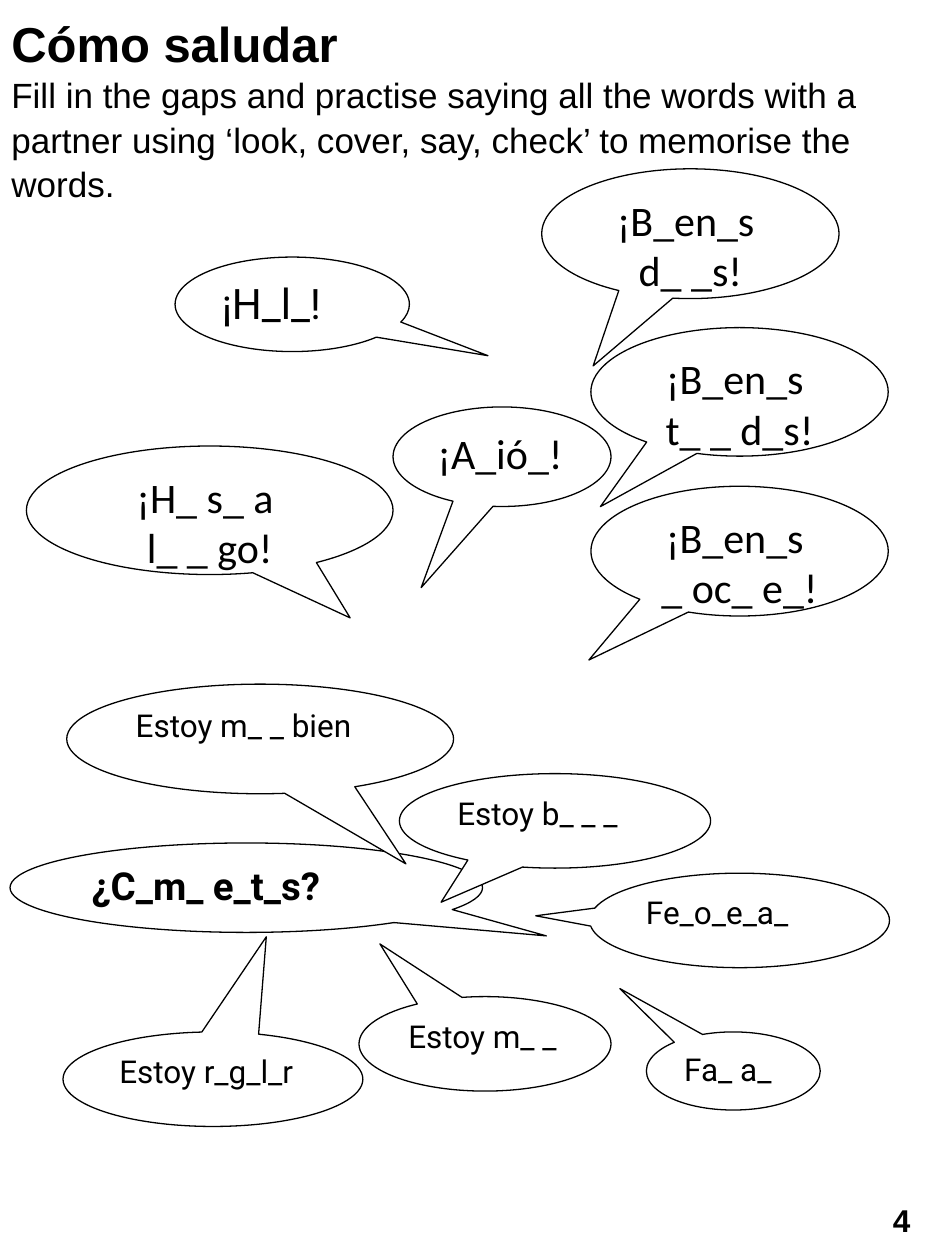
from collections import namedtuple
from dataclasses import dataclass

from pptx import Presentation
from pptx import util as u
from pptx.dml import color
from pptx.enum import shapes, text


@dataclass(frozen=True)
class Theme:
    ink: color.RGBColor = color.RGBColor(0, 0, 0)
    paper: color.RGBColor = color.RGBColor(255, 255, 255)
    outline: float = 0.75
    title: int = 28
    greeting: int = 24
    question: int = 22
    instruction: int = 20
    answer: int = 18
    page_number: int = 18


THEME = Theme()
Box = namedtuple("Box", "left top width height")
Style = namedtuple("Style", "font size bold align")
LEFT, CENTER = text.PP_ALIGN.LEFT, text.PP_ALIGN.CENTER

HELLO = Style("Roboto", THEME.greeting, False, LEFT)
GOODBYE = Style("Calibri", THEME.greeting, False, LEFT)
GREETING = Style("Calibri", THEME.greeting, False, CENTER)
QUESTION = Style("Roboto", THEME.question, True, LEFT)
ANSWER = Style("Roboto", THEME.answer, False, LEFT)
TITLE = Style("Arial", THEME.title, True, LEFT)
INSTRUCTION = Style("Arial", THEME.instruction, False, LEFT)
NUMBER = Style("Arial", THEME.page_number, True, CENTER)

GREETINGS = [
    ("¡H_l_!", Box(1.18, 0.7, 1.86, 0.75), (0.835, 0.544), HELLO),
    ("¡A_ió_!", Box(2.91, 1.89, 1.73, 0.79), (-0.371, 1.315), GOODBYE),
    ("¡B_en_s \vd_ _s!", Box(4.09, 0, 2.36, 1.03), (-0.327, 1.019), GREETING),
    ("¡B_en_s \vt_ _ d_s!", Box(4.48, 1.26, 2.36, 1.02), (-0.468, 0.893), GREETING),
    ("¡B_en_s \v_ oc_ e_!", Box(4.48, 2.52, 2.36, 1.03), (-0.507, 0.839), GREETING),
    ("¡H_ s_ a \vl_ _ go!", Box(0, 2.2, 2.91, 1.02), (0.383, 0.837), GREETING),
]
FEELINGS = [
    ("¿C_m_ e_t_s?", Box(0, 1.26, 3.75, 0.71), (0.635, 0.539), QUESTION),
    ("Estoy m_ _ bien", Box(0.45, 0, 3.07, 0.87), (0.377, 1.14), ANSWER),
    ("Estoy r_g_l_r", Box(0.42, 2.76, 2.38, 0.75), (0.178, -1.507), ANSWER),
    ("Estoy b_ _ _", Box(3.09, 0.71, 2.47, 0.75), (-0.366, 0.861), ANSWER),
    ("Estoy m_ _", Box(2.77, 2.48, 2, 0.75), (-0.417, -1.058), ANSWER),
    ("Fe_o_e_a_", Box(4.6, 1.5, 2.38, 0.75), (-0.68, -0.049), ANSWER),
    ("Fa_ a_", Box(5.05, 2.76, 1.38, 0.62), (-0.653, -1.056), ANSWER),
]


def format_span(span, style):
    span.font.name = style.font
    span.font.size = u.Pt(style.size)
    span.font.bold = style.bold
    span.font.color.rgb = THEME.ink


def write(frame, words, style, anchor):
    frame.word_wrap = True
    frame.vertical_anchor = anchor
    para = frame.paragraphs[0]
    para.text = words
    para.alignment = style.align
    for span in para.runs:
        format_span(span, style)


def add_box(page, kind, box):
    shape = page.shapes.add_shape(kind, *map(u.Inches, box))
    shape.shadow.inherit = False
    return shape


def draw_bubbles(page, box, bubbles):
    for words, place, tail, style in bubbles:
        spot = place._replace(left=box.left + place.left, top=box.top + place.top)
        bubble = add_box(page, shapes.MSO_SHAPE.OVAL_CALLOUT, spot)
        bubble.adjustments[0], bubble.adjustments[1] = tail
        bubble.fill.solid()
        bubble.fill.fore_color.rgb = THEME.paper
        bubble.line.color.rgb = THEME.ink
        bubble.line.width = u.Pt(THEME.outline)
        write(bubble.text_frame, words, style, text.MSO_ANCHOR.TOP)


def draw_heading(page, box):
    heading = page.shapes.title
    heading.left, heading.top, heading.width, heading.height = map(u.Inches, box)
    frame = heading.text_frame
    write(frame, "Cómo saludar\v", TITLE, text.MSO_ANCHOR.TOP)
    frame.auto_size = text.MSO_AUTO_SIZE.SHAPE_TO_FIT_TEXT
    para = frame.paragraphs[0]
    para.line_spacing = 1.05
    span = para.add_run()
    span.text = (
        "Fill in the gaps and practise saying all the words with a partner "
        "using ‘look, cover, say, check’ to memorise the words."
    )
    format_span(span, INSTRUCTION)


def draw_page_number(page, box):
    badge = add_box(page, shapes.MSO_SHAPE.ROUNDED_RECTANGLE, box)
    badge.fill.background()
    badge.line.fill.background()
    write(badge.text_frame, "4", NUMBER, text.MSO_ANCHOR.MIDDLE)


def main():
    deck = Presentation()
    deck.slide_width, deck.slide_height = u.Inches(7.5), u.Inches(10)
    page = deck.slides.add_slide(deck.slide_layouts[5])
    draw_heading(page, Box(-0.01, 0.03, 7.42, 1.58))
    draw_bubbles(page, Box(0.21, 1.34, 6.84, 3.55), GREETINGS)
    draw_bubbles(page, Box(0.08, 5.43, 6.98, 3.51), FEELINGS)
    draw_page_number(page, Box(6.88, 9.45, 0.55, 0.47))
    deck.save("out.pptx")


if __name__ == "__main__":
    main()
